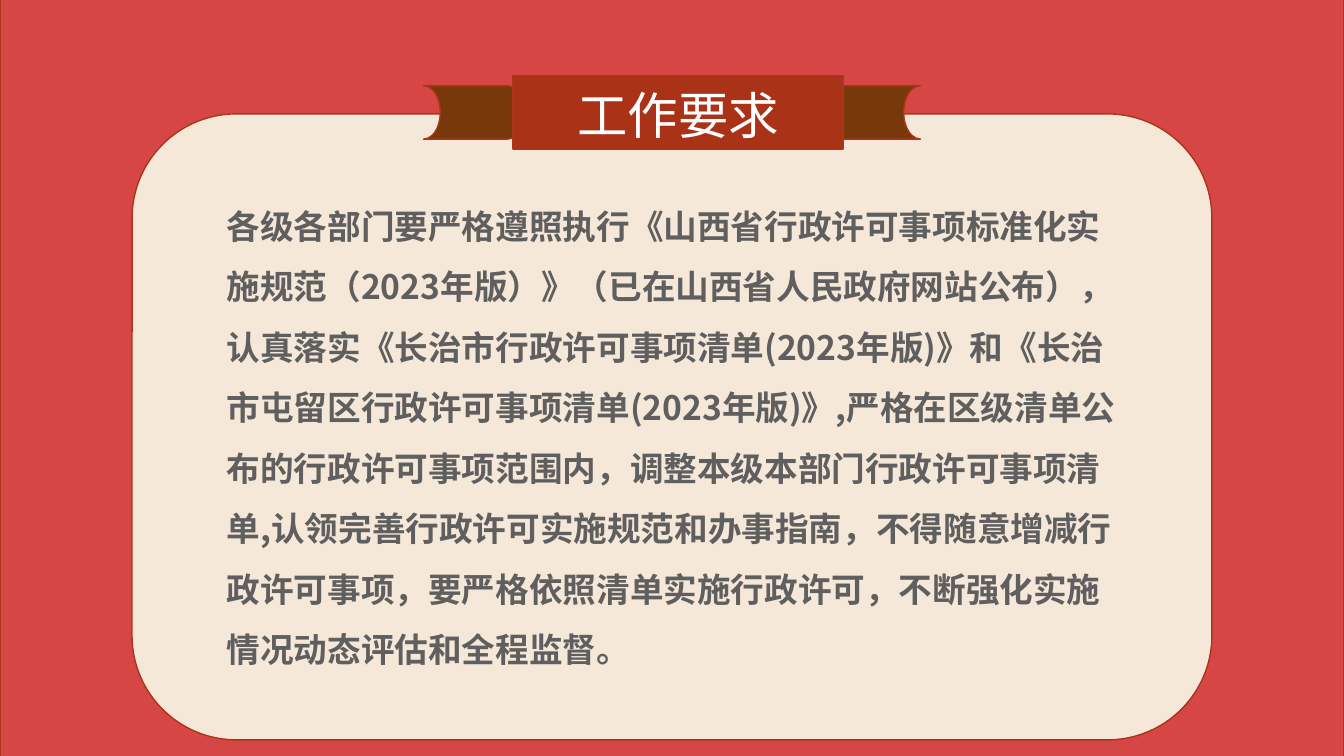
from lxml import etree
from pptx import Presentation
from pptx import util as u
from pptx.dml.color import RGBColor
from pptx.enum import shapes, text
from pptx.oxml import ns

BACKDROP = RGBColor(0xE6, 0x48, 0x23)
RED = RGBColor(0xD5, 0x46, 0x48)
CREAM = RGBColor(0xF5, 0xE8, 0xD8)
BROWN = RGBColor(0x77, 0x38, 0x0A)
BANNER = RGBColor(0xAA, 0x32, 0x17)
OUTLINE = RGBColor(0xAA, 0x35, 0x1A)
WHITE = RGBColor(0xFF, 0xFF, 0xFF)
GREY = RGBColor(0x5F, 0x5F, 0x5F)

TITLE = "工作要求"
BODY = (
    "各级各部门要严格遵照执行《山西省行政许可事项标准化实施规范（2023年版）》"
    "（已在山西省人民政府网站公布），认真落实《长治市行政许可事项清单(2023年版)》"
    "和《长治市屯留区行政许可事项清单(2023年版)》,严格在区级清单公布的行政许可事项范围内，"
    "调整本级本部门行政许可事项清单,认领完善行政许可实施规范和办事指南，"
    "不得随意增减行政许可事项，要严格依照清单实施行政许可，不断强化实施情况动态评估和全程监督。"
)


def place(item, left, top, width, height):
    item.left, item.top = u.Inches(left), u.Inches(top)
    item.width, item.height = u.Inches(width), u.Inches(height)


def add_panel(page, kind, box, color):
    panel = page.shapes.add_shape(kind, *map(u.Inches, box))
    panel.shadow.inherit = False
    panel.fill.solid()
    panel.fill.fore_color.rgb = color
    panel.line.color.rgb = OUTLINE
    panel.line.width = u.Pt(1)
    return panel


def style_text(para, face, size, color, bold):
    font = para.font
    font.size, font.bold = u.Pt(size), bold
    font.color.rgb = color
    font.name = face
    # Chinese characters take the East Asian typeface
    etree.SubElement(font._element, ns.qn("a:ea"), typeface=face)


def add_background(page, left, top, width, height):
    page.background.fill.solid()
    page.background.fill.fore_color.rgb = BACKDROP
    cover = add_panel(page, shapes.MSO_SHAPE.RECTANGLE, (left, top, width, height), RED)
    color = cover.fill._xPr.find(".//" + ns.qn("a:srgbClr"))
    etree.SubElement(color, ns.qn("a:alpha"), val="90000")


def add_card(page, left, top, width, height):
    add_panel(page, shapes.MSO_SHAPE.FLOWCHART_ALTERNATE_PROCESS,
              (left, top, width, height), CREAM)
    # Body text
    body = page.shapes.add_textbox(0, 0, 0, 0)
    place(body, left + 0.84, top + 0.66, width - 1.63, height - 1.16)
    frame = body.text_frame
    frame.word_wrap = True
    para = frame.paragraphs[0]
    para.text = BODY
    para.line_spacing = 1.5
    style_text(para, "Noto Sans CJK SC", 24, GREY, True)


def add_ribbon(page, left, top, width, height):
    # Tails on both sides
    tail = 1
    for tail_left, turn in ((left + width - tail, 0), (left, 180)):
        end = add_panel(page, shapes.MSO_SHAPE.FLOWCHART_STORED_DATA,
                        (tail_left, top + 0.1, tail, 0.53), BROWN)
        end.rotation = turn
    # Front band
    band_left, band_width = left + 0.89, 3.27
    add_panel(page, shapes.MSO_SHAPE.RECTANGLE,
              (band_left, top, band_width, height), BANNER)
    # Title, brought in front of the band
    title = page.shapes.title
    place(title, band_left, top + 0.02, band_width, height - 0.02)
    page.shapes._spTree.append(title._element)
    frame = title.text_frame
    frame.word_wrap = True
    frame.auto_size = text.MSO_AUTO_SIZE.SHAPE_TO_FIT_TEXT
    frame.vertical_anchor = text.MSO_ANCHOR.BOTTOM
    para = frame.paragraphs[0]
    para.text = TITLE
    para.alignment = text.PP_ALIGN.CENTER
    style_text(para, "Noto Sans CJK JP", 36, WHITE, False)


def main():
    deck = Presentation()
    deck.slide_width, deck.slide_height = u.Inches(13.33), u.Inches(7.5)
    page = deck.slides.add_slide(deck.slide_layouts[5])
    add_background(page, 0, -0.02, 13.33, 9.97)
    add_card(page, 1.31, 1.13, 10.71, 6.21)
    add_ribbon(page, 4.2, 0.75, 4.93, 0.73)
    deck.save("out.pptx")


if __name__ == "__main__":
    main()
